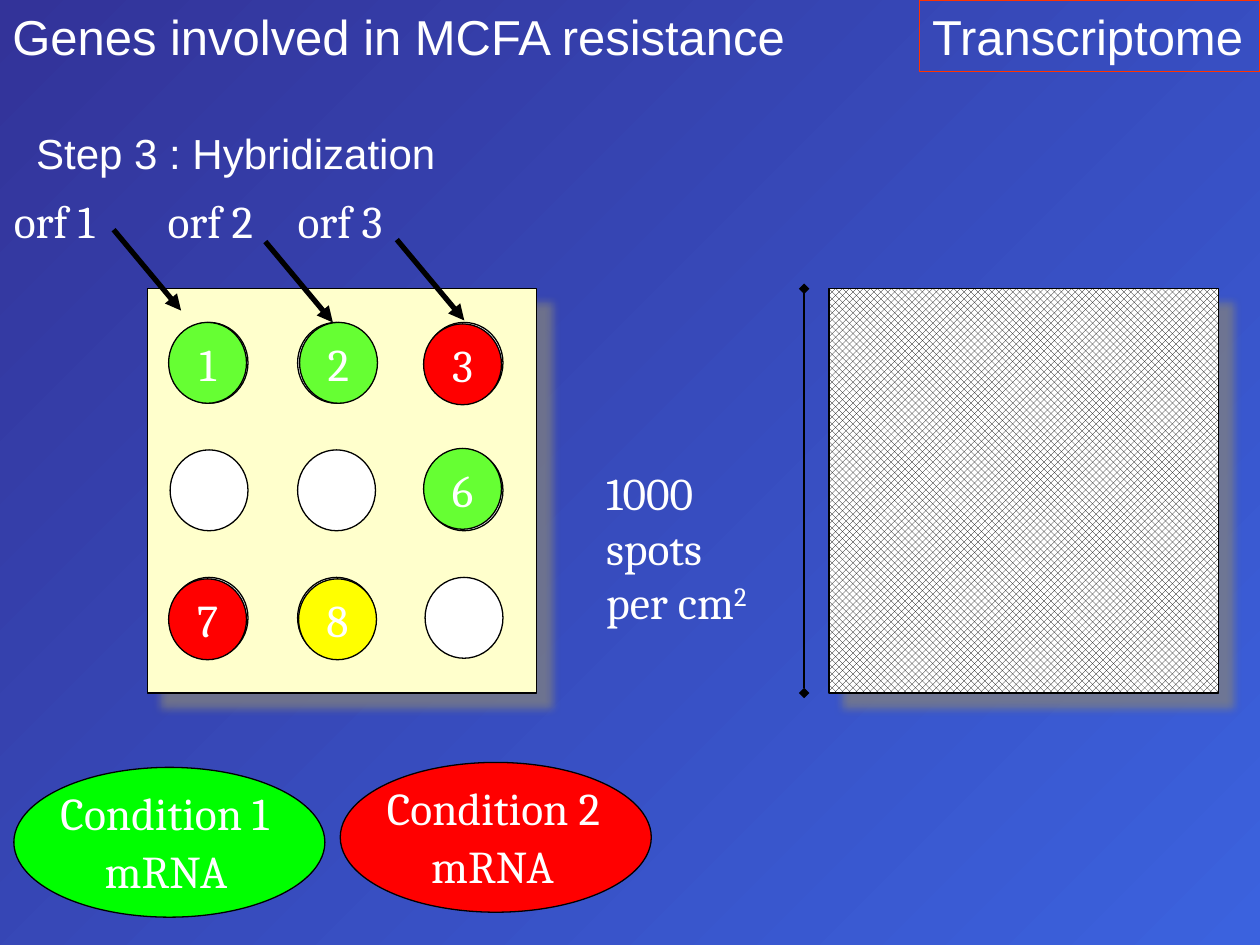
from typing import NamedTuple

from lxml import etree
from pptx import Presentation
from pptx.dml.color import RGBColor
from pptx.enum.dml import MSO_PATTERN
from pptx.enum.shapes import MSO_CONNECTOR, MSO_SHAPE
from pptx.enum.text import MSO_ANCHOR, MSO_AUTO_SIZE, PP_ALIGN
from pptx.oxml.ns import qn
from pptx.util import Cm, Pt

RECT, OVAL = MSO_SHAPE.RECTANGLE, MSO_SHAPE.OVAL
LINE = MSO_CONNECTOR.STRAIGHT
CHECK = MSO_PATTERN.LARGE_CHECKER_BOARD
LEFT, CENTER = PP_ALIGN.LEFT, PP_ALIGN.CENTER
MIDDLE, TOP = MSO_ANCHOR.MIDDLE, MSO_ANCHOR.TOP
GROW, FIXED = MSO_AUTO_SIZE.SHAPE_TO_FIT_TEXT, MSO_AUTO_SIZE.NONE

WHITE, BLACK, RED, GREEN = "FFFFFF", "000000", "FF0000", "66FF33"
PANEL_Y, PANEL_W, PANEL_H = 5.82, 7.85, 8.15
SPOT_X, SPOT_Y, SPOT_W, SPOT_H, PITCH = 3.43, 6.5, 1.57, 1.63, 2.57


class Box(NamedTuple):
    x: float
    y: float
    w: float
    h: float


class Spot(NamedTuple):
    num: int
    fill: str
    dx: float
    dy: float


class Orf(NamedTuple):
    text: str
    x: float
    tip_x: float
    tip_y: float


class Pool(NamedTuple):
    text: str
    fill: str
    x: float
    y: float


SPOTS = [
    Spot(1, GREEN, -0.03, 0), Spot(2, GREEN, 0.04, 0), Spot(6, GREEN, -0.03, -0.03),
    Spot(3, RED, -0.03, 0.03), Spot(7, RED, -0.03, 0.03), Spot(8, "FFFF00", 0.02, 0.03),
]
ORFS = [Orf("orf 1", 0, 3.65, 6.26), Orf("orf 2", 3.1, 6.71, 6.5),
        Orf("orf 3", 5.72, 9.36, 6.46)]
POOLS = [Pool("Condition 1", "00FF00", 0.28, 15.47), Pool("Condition 2", RED, 6.86, 15.37)]


def rgb(code: str) -> RGBColor:
    return RGBColor.from_string(code)


def lengths(box: Box) -> list:
    return [Cm(v) for v in box]


def shape(slide, kind, box: Box, fill=None, line: str = BLACK):
    item = slide.shapes.add_shape(kind, *lengths(box))
    item.shadow.inherit = False
    if fill:
        item.fill.solid()
        item.fill.fore_color.rgb = rgb(fill)
    else:
        item.fill.background()
    item.line.color.rgb = rgb(line)
    item.line.width = Pt(0.75)
    return item


def write(item, text: str, *, size=26, font="Cambria", align=LEFT, anchor=TOP,
          fit=GROW, pad=0.28, sup=""):
    frame = item.text_frame
    frame.word_wrap = False
    frame.auto_size = fit
    frame.vertical_anchor = anchor
    frame.margin_left = frame.margin_right = Cm(pad)
    frame.margin_top = frame.margin_bottom = Cm(0.13)
    par = frame.paragraphs[0]
    par.text = text
    par.alignment = align
    if sup:
        run = par.add_run()
        run.text = sup
        run.font._element.set("baseline", "30000")
    for run in par.runs:
        run.font.size = Pt(size)
        run.font.name = font
        run.font.color.rgb = rgb(WHITE)


def label(slide, text: str, box: Box, **form):
    write(slide.shapes.add_textbox(*lengths(box)), text, **form)


def arrow(slide, x1, y1, x2, y2, width: float, **ends: str):
    """Draw a line; ends maps headEnd or tailEnd to an arrowhead type."""
    item = slide.shapes.add_connector(LINE, Cm(x1), Cm(y1), Cm(x2), Cm(y2))
    item.line.color.rgb = rgb(BLACK)
    item.line.width = Pt(width)
    ln = item.line._get_or_add_ln()
    for end, style in ends.items():
        etree.SubElement(ln, qn(f"a:{end}"), type=style)
    etree.SubElement(item._element.spPr, qn("a:effectLst"))


def panel(slide, x: float, fill=None):
    item = shape(slide, RECT, Box(x, PANEL_Y, PANEL_W, PANEL_H), fill)
    glow = item._element.spPr.find(qn("a:effectLst"))
    cast = etree.SubElement(glow, qn("a:outerShdw"), blurRad=str(Pt(5)),
                            dist=str(Pt(11.3)), dir="2700000", algn="ctr", rotWithShape="0")
    tone = etree.SubElement(cast, qn("a:srgbClr"), val="808080")
    etree.SubElement(tone, qn("a:alpha"), val="75000")
    return item


def disc(slide, num: int, fill: str, dx: float = 0, dy: float = 0):
    row, col = divmod(num - 1, 3)
    box = Box(SPOT_X + col * PITCH + dx, SPOT_Y + row * PITCH + dy, SPOT_W, SPOT_H)
    return shape(slide, OVAL, box, fill)


def paint(slide):
    fill = slide.background.fill
    fill.gradient()
    fill.gradient_angle = 315
    for stop, code in zip(fill.gradient_stops, ("333399", "3B62DE")):
        stop.color.rgb = rgb(code)


def main():
    prs = Presentation()
    prs.slide_width, prs.slide_height = Cm(25.4), Cm(19.05)
    slide = prs.slides.add_slide(prs.slide_layouts[6])
    paint(slide)

    panel(slide, 2.97, "FFFFCC")
    for num in range(1, 10):
        disc(slide, num, WHITE)
    for orf in ORFS:
        arrow(slide, orf.tip_x - 1.36, orf.tip_y - 1.63, orf.tip_x, orf.tip_y, 3,
              tailEnd="triangle")
        label(slide, orf.text, Box(orf.x, 3.77, 2.39, 1.37))
    for pool in POOLS:
        shape(slide, OVAL, Box(pool.x, pool.y, 6.27, 3.02), pool.fill)
        label(slide, pool.text, Box(pool.x + 0.66, pool.y + 0.23, 5.21, 1.37))
        label(slide, "mRNA", Box(pool.x + 1.55, pool.y + 1.4, 3.23, 1.4))
    for spot in SPOTS:
        write(disc(slide, *spot), str(spot.num), align=CENTER, anchor=MIDDLE, fit=FIXED)

    chip = panel(slide, 16.71)
    chip.fill.patterned()
    chip.fill.pattern = CHECK
    chip.fill.fore_color.rgb = rgb(BLACK)
    chip.fill.back_color.rgb = rgb(WHITE)
    arrow(slide, 16.21, PANEL_Y, 16.21, PANEL_Y + PANEL_H, 0.75,
          headEnd="diamond", tailEnd="diamond")
    label(slide, "1000\vspots\vper cm", Box(11.94, 9.25, 3.4, 3.61), sup="2")

    head = {"font": "Arial", "pad": 0.25}
    tag = shape(slide, RECT, Box(18.54, 0, 6.86, 1.45), line="FF3300")
    write(tag, "Transcriptome", size=28, **head)
    label(slide, "Step 3 : Hybridization", Box(0.48, 2.44, 8.64, 1.27), size=24, **head)
    label(slide, "Genes involved in MCFA resistance", Box(0, 0, 16.26, 1.45), size=28, **head)
    prs.save("out.pptx")


if __name__ == "__main__":
    main()
